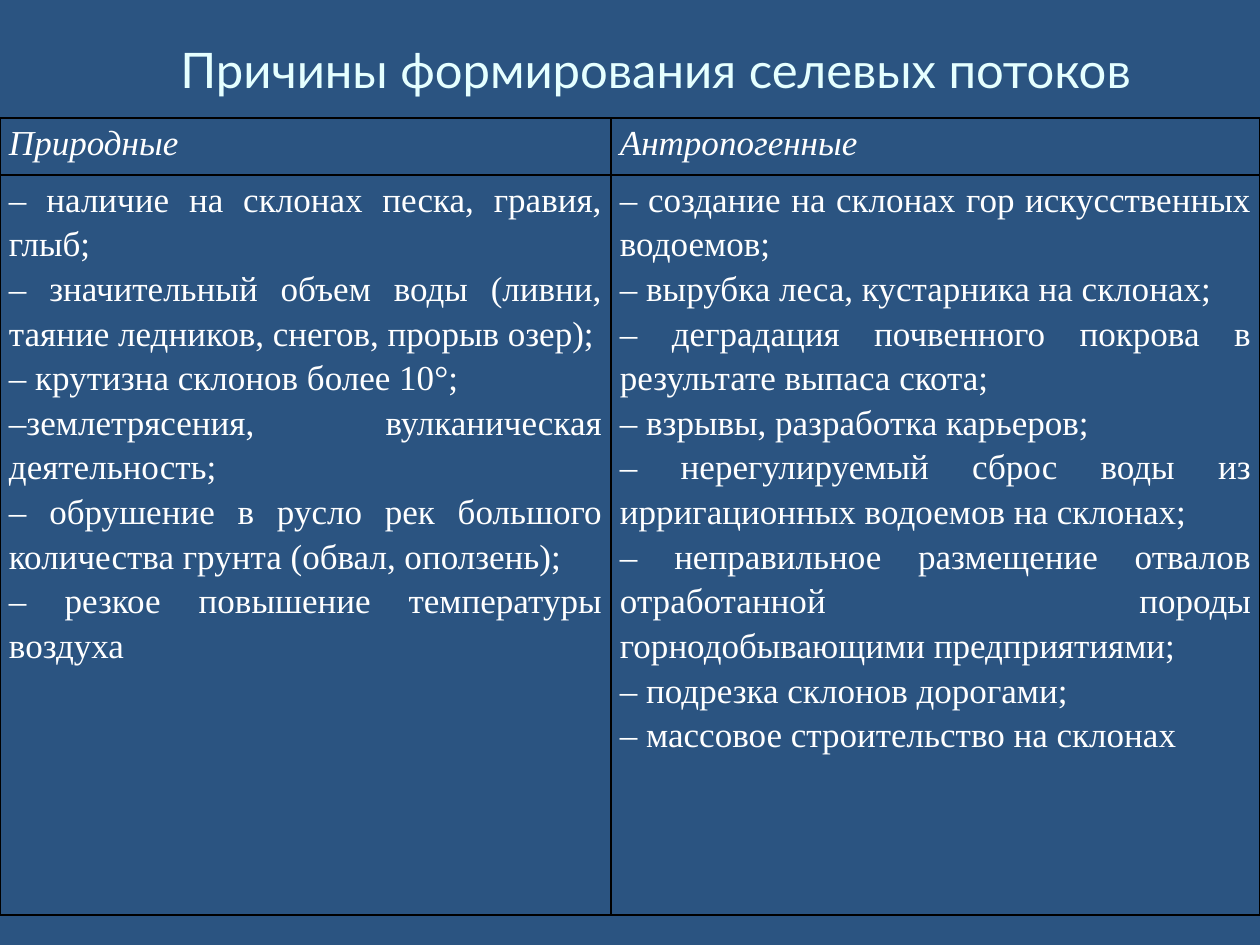
"""Build a slide comparing natural and man-made causes of mudflows."""

from dataclasses import dataclass

import lxml.etree
import pptx
import pptx.dml.color
import pptx.enum.text
import pptx.oxml.ns
import pptx.slide
import pptx.table
import pptx.text.text
import pptx.util

PIXELS_PER_INCH = 126
SLIDE_WIDTH, SLIDE_HEIGHT = 1260, 945
BACKGROUND, TITLE_COLOUR = "2B5481", "E5FFFF"
TEXT_COLOUR, BORDER_COLOUR = "FFFFFF", "000000"
TABLE_TOP = 118
ROW_HEIGHTS = (57, 740)


@dataclass(frozen=True)
class CauseColumn:
    heading: str
    width: int
    causes: tuple[str, ...]


COLUMNS = (
    CauseColumn("Природные", 611, (
        "– наличие на склонах песка, гравия, глыб;",
        "– значительный объем воды (ливни, таяние ледников, снегов, прорыв озер);",
        "– крутизна склонов более 10°;",
        "–землетрясения, вулканическая деятельность;",
        "– обрушение в русло рек большого количества грунта (обвал, оползень);",
        "– резкое повышение температуры воздуха",
    )),
    CauseColumn("Антропогенные", 649, (
        "– создание на склонах гор искусственных водоемов;",
        "– вырубка леса, кустарника на склонах;",
        "– деградация почвенного покрова в результате выпаса скота;",
        "– взрывы, разработка карьеров;",
        "– нерегулируемый сброс воды из ирригационных водоемов на склонах;",
        "– неправильное размещение отвалов отработанной породы "
        "горнодобывающими предприятиями;",
        "– подрезка склонов дорогами;",
        "– массовое строительство на склонах",
    )),
)


def px(length: int) -> pptx.util.Emu:
    return pptx.util.Emu(round(length * 914400 / PIXELS_PER_INCH))


def colour(value: str) -> pptx.dml.color.RGBColor:
    return pptx.dml.color.RGBColor.from_string(value)


def format_runs(paragraph: pptx.text.text._Paragraph, font_name: str,
                size: int, font_colour: str, italic: bool = False) -> None:
    for run in paragraph.runs:
        run.font.name = font_name
        run.font.size = pptx.util.Pt(size)
        run.font.italic = italic
        run.font.color.rgb = colour(font_colour)


def add_title(slide: pptx.slide.Slide, text: str) -> None:
    shape = slide.shapes.add_textbox(px(129), px(39), px(1053), px(60))
    text_frame = shape.text_frame
    text_frame.word_wrap = True
    text_frame.vertical_anchor = pptx.enum.text.MSO_ANCHOR.MIDDLE
    text_frame.text = text
    paragraph = text_frame.paragraphs[0]
    paragraph.alignment = pptx.enum.text.PP_ALIGN.CENTER
    format_runs(paragraph, "Lato", 28, TITLE_COLOUR)


def add_borders(cell: pptx.table._Cell) -> None:
    properties = cell._tc.get_or_add_tcPr()
    qualified = pptx.oxml.ns.qn
    for side in ("a:lnL", "a:lnR", "a:lnT", "a:lnB"):
        line = lxml.etree.SubElement(
            properties, qualified(side), w=str(int(pptx.util.Pt(1))))
        fill = lxml.etree.SubElement(line, qualified("a:solidFill"))
        lxml.etree.SubElement(fill, qualified("a:srgbClr"), val=BORDER_COLOUR)


def fill_cell(cell: pptx.table._Cell, lines: tuple[str, ...], italic: bool) -> None:
    add_borders(cell)
    cell.fill.background()
    cell.margin_left = cell.margin_right = px(9)
    cell.margin_top = cell.margin_bottom = 0
    cell.text_frame.text = "\n".join(lines)
    for paragraph in cell.text_frame.paragraphs:
        paragraph.alignment = pptx.enum.text.PP_ALIGN.JUSTIFY
        paragraph.line_spacing = 1.15
        format_runs(paragraph, "Times New Roman", 20, TEXT_COLOUR, italic)


def add_cause_table(slide: pptx.slide.Slide, columns: tuple[CauseColumn, ...]) -> None:
    table = slide.shapes.add_table(
        len(ROW_HEIGHTS), len(columns), 0, px(TABLE_TOP),
        px(SLIDE_WIDTH), px(sum(ROW_HEIGHTS))).table
    table.first_row = table.horz_banding = False
    for row, height in zip(table.rows, ROW_HEIGHTS):
        row.height = px(height)
    for index, column in enumerate(columns):
        table.columns[index].width = px(column.width)
        fill_cell(table.cell(0, index), (column.heading,), italic=True)
        fill_cell(table.cell(1, index), column.causes, italic=False)


def main() -> None:
    presentation = pptx.Presentation()
    presentation.slide_width = px(SLIDE_WIDTH)
    presentation.slide_height = px(SLIDE_HEIGHT)
    slide = presentation.slides.add_slide(presentation.slide_layouts[6])
    slide.background.fill.solid()
    slide.background.fill.fore_color.rgb = colour(BACKGROUND)
    add_title(slide, "Причины формирования селевых потоков")
    add_cause_table(slide, COLUMNS)
    presentation.save("out.pptx")


if __name__ == "__main__":
    main()
